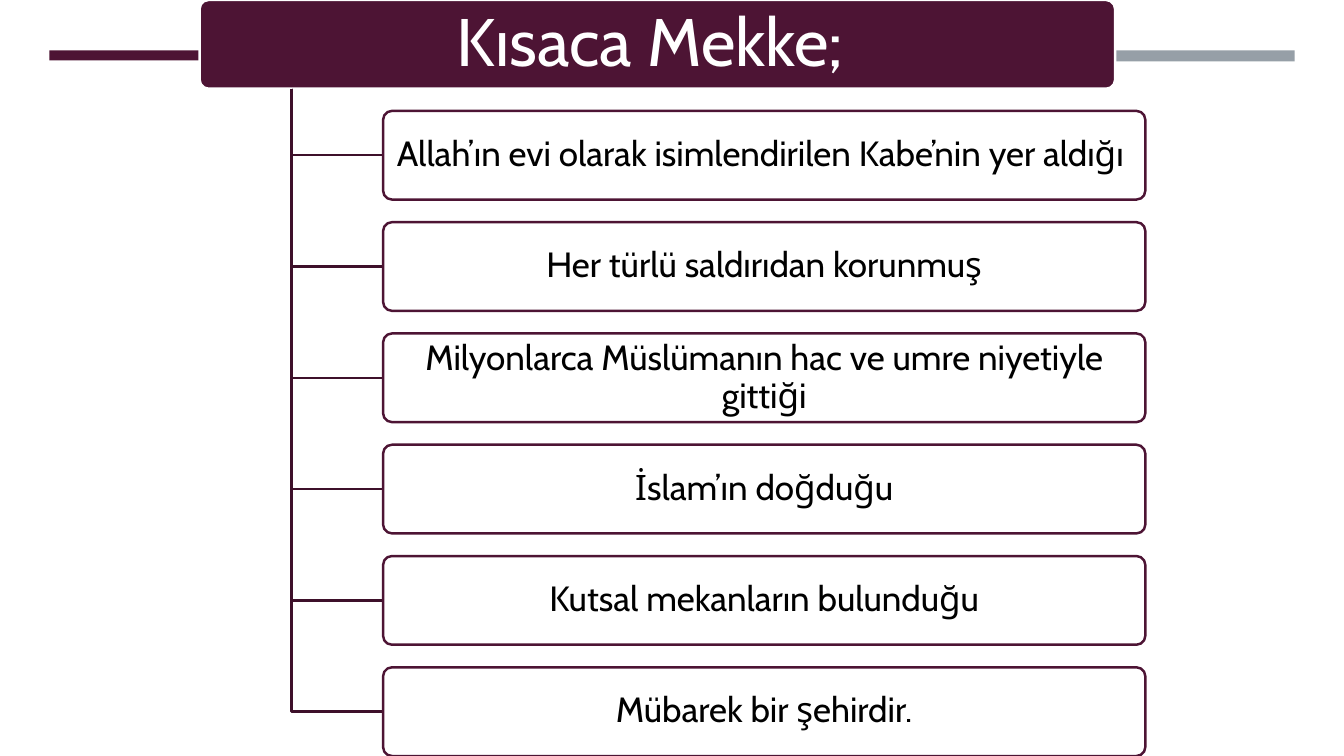
from dataclasses import dataclass

from lxml.etree import SubElement
from pptx import Presentation
from pptx.dml.color import RGBColor
from pptx.enum.shapes import MSO_SHAPE
from pptx.enum.text import MSO_ANCHOR, PP_ALIGN
from pptx.oxml.ns import qn
from pptx.shapes.autoshape import Shape
from pptx.slide import Slide
from pptx.util import Inches, Pt


@dataclass(frozen=True)
class Theme:
    plum: RGBColor = RGBColor(0x4D, 0x14, 0x34)
    branch: RGBColor = RGBColor(0x3E, 0x10, 0x2A)
    gray: RGBColor = RGBColor(0x96, 0x9F, 0xA7)
    white: RGBColor = RGBColor(0xFF, 0xFF, 0xFF)
    black: RGBColor = RGBColor(0, 0, 0)
    font: str = "Cabin"
    title_size: float = 48
    item_size: float = 25
    line_width: float = 1.75


@dataclass(frozen=True)
class Area:
    left: float
    top: float
    width: float
    height: float

    @property
    def middle(self) -> float:
        return self.top + self.height / 2

    @property
    def bottom(self) -> float:
        return self.top + self.height


@dataclass(frozen=True)
class Bar:
    area: Area
    color: RGBColor


THEME = Theme()
BARS = (
    Bar(Area(0.49, 0.5, 4.05, 0.1), THEME.plum),
    Bar(Area(8.79, 0.5, 4.05, 0.11), THEME.gray),
)
TITLE = Area(1.98, 0, 9.08, 0.88)
TRUNK_LEFT = 2.89
FIRST_ITEM = Area(3.8, 1.1, 7.56, 0.88)
ITEM_STEP = 1.104
ITEMS = (
    "Allah’ın evi olarak isimlendirilen Kabe’nin yer aldığı ",
    "Her türlü saldırıdan korunmuş",
    "Milyonlarca Müslümanın hac ve umre niyetiyle gittiği",
    "İslam’ın doğduğu",
    "Kutsal mekanların bulunduğu",
    "Mübarek bir şehirdir.",
)


def add_block(page: Slide, kind: MSO_SHAPE, area: Area, fill: RGBColor) -> Shape:
    box = page.shapes.add_shape(
        kind, Inches(area.left), Inches(area.top), Inches(area.width), Inches(area.height)
    )
    box.shadow.inherit = False
    box.fill.solid()
    box.fill.fore_color.rgb = fill
    box.line.fill.background()
    return box


def add_card(page: Slide, area: Area, fill: RGBColor, line: RGBColor) -> Shape:
    box = add_block(page, MSO_SHAPE.ROUNDED_RECTANGLE, area, fill)
    box.adjustments[0] = 0.1
    box.line.color.rgb = line
    box.line.width = Pt(THEME.line_width)
    return box


def write_text(
    box: Shape, text: str, *, size: float, color: RGBColor, inset_x: float, inset_y: float
) -> None:
    frame = box.text_frame
    frame.word_wrap = True
    frame.vertical_anchor = MSO_ANCHOR.MIDDLE
    frame.margin_left = frame.margin_right = Inches(inset_x)
    frame.margin_top = frame.margin_bottom = Inches(inset_y)
    para = frame.paragraphs[0]
    para.alignment = PP_ALIGN.CENTER
    para.line_spacing = 0.9
    span = para.add_run()
    span.text = text
    span.font.name = THEME.font
    span.font.size = Pt(size)
    span.font.color.rgb = color


def set_opacity(box: Shape, percent: int) -> None:
    color = next(box.fill._xPr.iter(qn("a:srgbClr")))
    SubElement(color, qn("a:alpha")).set("val", str(percent * 1000))


def add_branch(page: Slide, item: Area) -> None:
    builder = page.shapes.build_freeform(Inches(TRUNK_LEFT), Inches(TITLE.bottom))
    corner = (Inches(TRUNK_LEFT), Inches(item.middle))
    end = (Inches(item.left), Inches(item.middle))
    builder.add_line_segments((corner, end), close=False)
    branch = builder.convert_to_shape()
    branch.shadow.inherit = False
    branch.fill.background()
    branch.line.color.rgb = THEME.branch
    branch.line.width = Pt(THEME.line_width)


def add_item(page: Slide, text: str, index: int) -> None:
    area = Area(
        FIRST_ITEM.left,
        FIRST_ITEM.top + index * ITEM_STEP,
        FIRST_ITEM.width,
        FIRST_ITEM.height,
    )
    add_branch(page, area)
    box = add_card(page, area, THEME.white, THEME.plum)
    set_opacity(box, 90)
    write_text(
        box, text, size=THEME.item_size, color=THEME.black, inset_x=0.05, inset_y=0.03
    )


def main() -> None:
    deck = Presentation()
    deck.slide_width = Inches(13.33)
    deck.slide_height = Inches(7.5)
    page = deck.slides.add_slide(deck.slide_layouts[6])
    for bar in BARS:
        add_block(page, MSO_SHAPE.RECTANGLE, bar.area, bar.color)
    title = add_card(page, TITLE, THEME.plum, THEME.white)
    write_text(
        title,
        "Kısaca Mekke; ",
        size=THEME.title_size,
        color=THEME.white,
        inset_x=0.1,
        inset_y=0.07,
    )
    for index, text in enumerate(ITEMS):
        add_item(page, text, index)
    deck.save("out.pptx")


if __name__ == "__main__":
    main()
